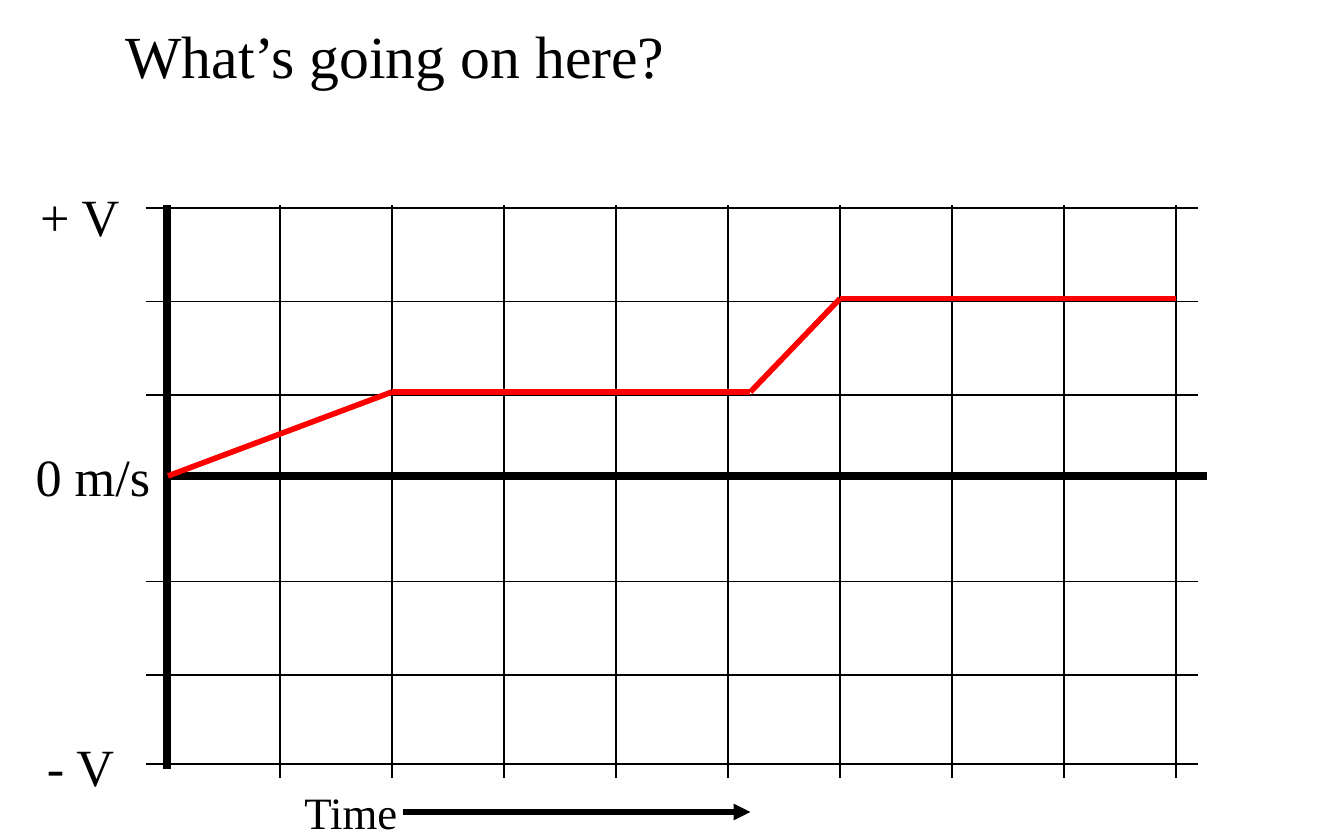
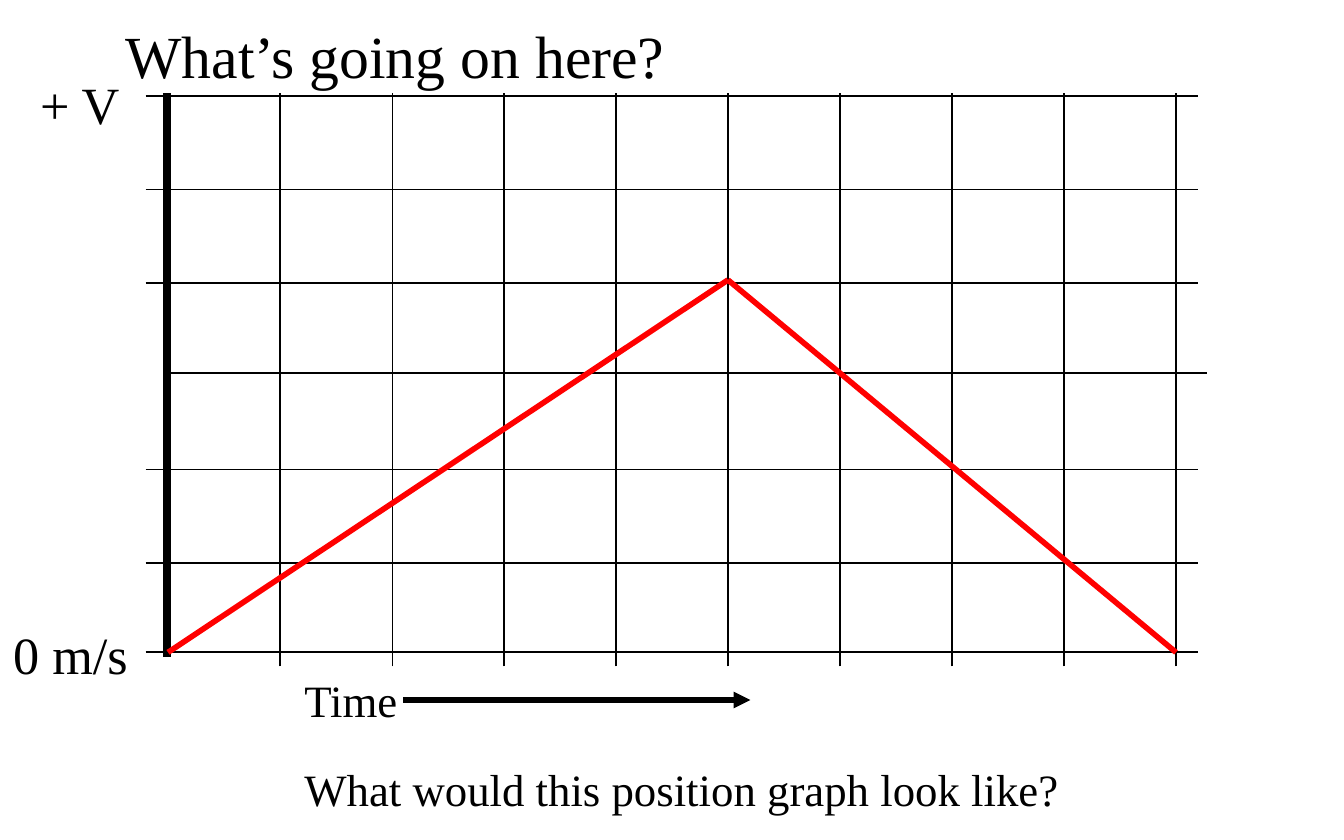
from itertools import pairwise

from lxml.etree import SubElement
from pptx import Presentation
from pptx.dml.color import RGBColor
from pptx.enum.shapes import MSO_CONNECTOR
from pptx.enum.text import MSO_ANCHOR, MSO_AUTO_SIZE, PP_ALIGN
from pptx.oxml.ns import qn
from pptx.util import Inches, Pt

COLOURS = {"ink": "000000", "motion": "FF0000", "paper": "FFFFFF"}
FONT = "Times New Roman"
COLUMNS, ROWS = 12, 9
AXIS_COLUMN = 1.5
LAST_COLUMN = 9
BOTTOM_ROW = 5.96
HAIRLINE, GRID, CURVE, AXIS = 0.25, 1, 3, 4


class GraphDeck:
    """Draws on a slide grid whose origin is the top of the current velocity axis."""

    def __init__(self):
        self.deck = Presentation()
        self.deck.slide_width = Inches(10)
        self.deck.slide_height = Inches(6.25)
        self.column = self.deck.slide_width / COLUMNS
        self.row = self.deck.slide_height / ROWS

    def start_slide(self, title, top):
        """Add a titled slide; top is the slide row of the highest grid line."""
        self.top = top
        self.slide = self.deck.slides.add_slide(self.deck.slide_layouts[5])
        background = self.slide.background.fill
        background.solid()
        background.fore_color.rgb = RGBColor.from_string(COLOURS["paper"])
        heading = self.slide.shapes.title
        heading.left, heading.top = round(self.column), round(0.13 * self.row)
        heading.width, heading.height = round(5.1 * self.column), round(0.92 * self.row)
        self.set_words(heading.text_frame, title, 32)

    def point(self, column, row):
        return (round((AXIS_COLUMN + column) * self.column),
                round((self.top + row) * self.row))

    def set_words(self, frame, words, size):
        frame.text = words
        frame.word_wrap = False
        frame.auto_size = MSO_AUTO_SIZE.SHAPE_TO_FIT_TEXT
        frame.vertical_anchor = MSO_ANCHOR.TOP
        paragraph = frame.paragraphs[0]
        paragraph.alignment = PP_ALIGN.LEFT
        font = paragraph.runs[0].font
        font.name, font.size = FONT, Pt(size)
        font.color.rgb = RGBColor.from_string(COLOURS["ink"])

    def label(self, words, column, row, width, size=28):
        height = 0.82 if size == 28 else 0.72
        box = self.slide.shapes.add_textbox(
            *self.point(column, row), round(width * self.column), round(height * self.row))
        self.set_words(box.text_frame, words, size)

    def line(self, start, end, weight=GRID, colour="ink", arrow=False):
        connector = self.slide.shapes.add_connector(
            MSO_CONNECTOR.STRAIGHT, *self.point(*start), *self.point(*end))
        connector.line.color.rgb = RGBColor.from_string(COLOURS[colour])
        connector.line.width = Pt(weight)
        properties = connector.element.find(qn("p:spPr"))
        if arrow:
            SubElement(properties.find(qn("a:ln")), qn("a:tailEnd"), type="triangle")
        SubElement(properties, qn("a:effectLst"))

    def graph_paper(self, middle_row, middle_weight, faint_columns=()):
        """Draw both axes, the grid and the time arrow."""
        self.line((-0.01, -0.03), (-0.01, 6.01), AXIS)
        self.line((-0.02, middle_row), (9.28, middle_row), middle_weight)
        for column in range(1, LAST_COLUMN + 1):
            weight = HAIRLINE if column in faint_columns else GRID
            self.line((column, 6.11), (column, -0.03), weight)
        for row in (0, 1, 2, 4, 5, BOTTOM_ROW):
            self.line((-0.2, row), (9.2, row))
        self.label("+ V", -1.26, -0.33, 0.96)
        self.label("Time", 1.1, 6.11, 1.08, 24)
        self.line((2.1, 6.47), (5.2, 6.47), CURVE, arrow=True)

    def velocity(self, *points):
        for start, end in pairwise(points):
            self.line(start, end, CURVE, "motion")


def main():
    graphs = GraphDeck()
    title = "What’s going on here?"

    graphs.start_slide(title, top=2.23)
    zero_row = 2.87
    graphs.graph_paper(zero_row, AXIS)
    graphs.label("0 m/s", -1.3, 2.46, 1.27)
    graphs.label("- V", -1.2, 5.57, 0.85)
    graphs.velocity((0, zero_row), (2, 1.97), (5.2, 1.97), (6, 0.97), (LAST_COLUMN, 0.97))

    graphs.start_slide(title, top=1.03)
    graphs.graph_paper(2.97, GRID, faint_columns=(2,))
    graphs.label("0 m/s", -1.5, 5.57, 1.27)
    graphs.velocity((0, BOTTOM_ROW), (5, 1.97), (LAST_COLUMN, BOTTOM_ROW))
    graphs.label("What would this position graph look like?", 1.1, 7.06, 7.03, 24)

    graphs.deck.save("out.pptx")


if __name__ == "__main__":
    main()
